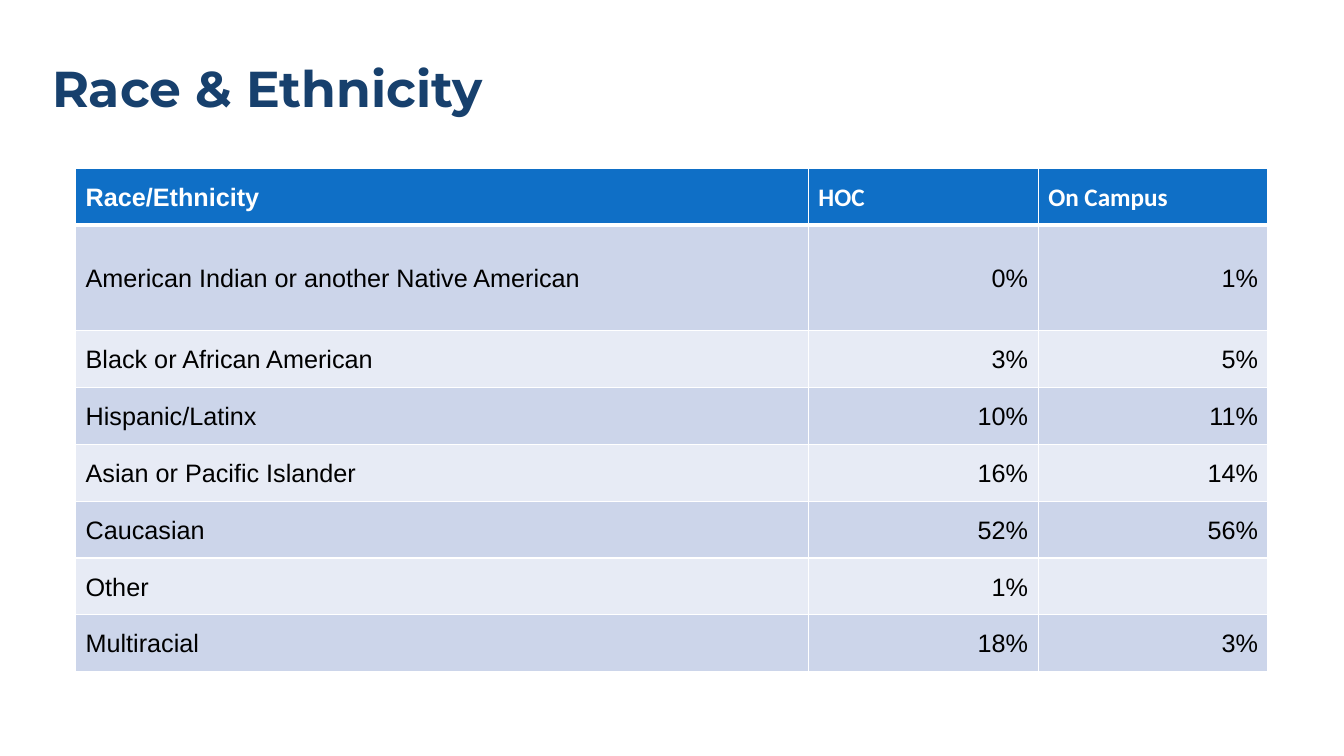
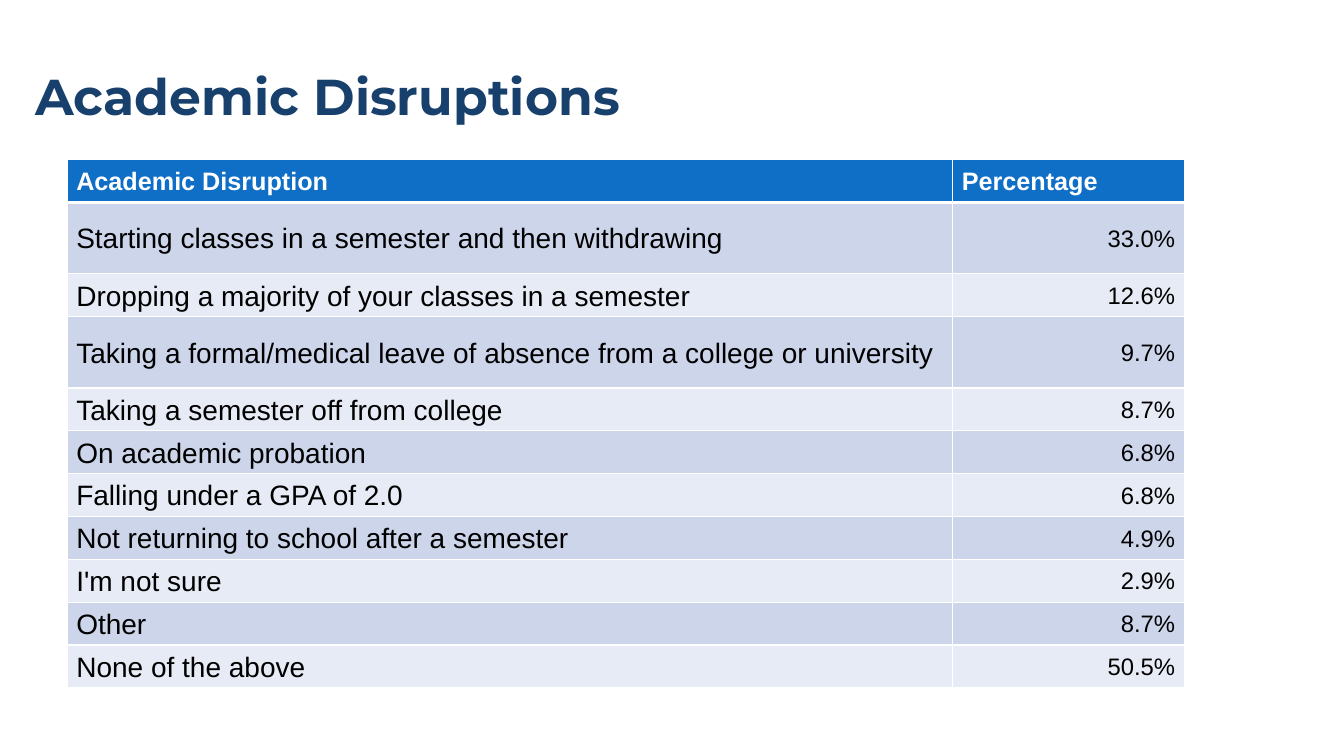
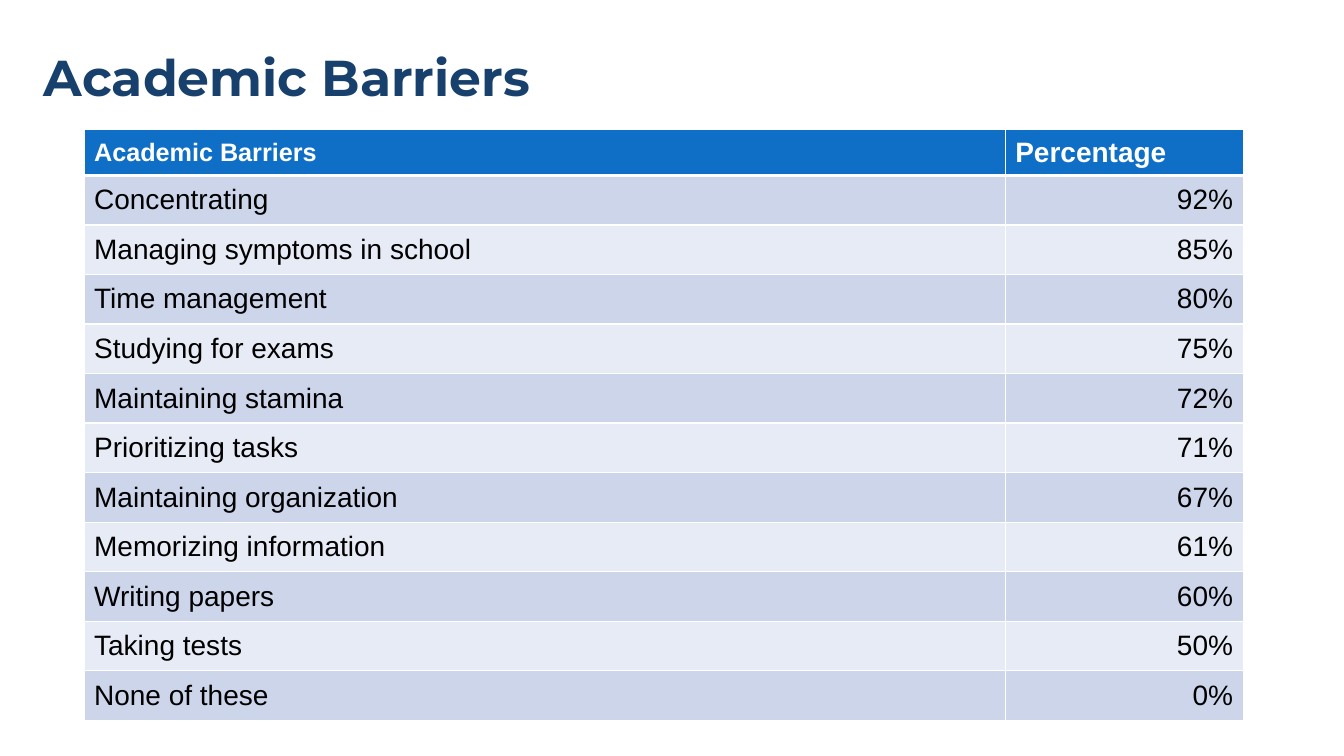
import pptx
import pptx.dml.color
import pptx.enum.text
import pptx.oxml.ns
import pptx.util
from lxml import etree

Pt = pptx.util.Pt
ANCHOR = pptx.enum.text.MSO_ANCHOR
ALIGN = pptx.enum.text.PP_ALIGN
COLORS = {
    "title": "17406D", "header": "0F6FC6", "band_dark": "CCD5EA",
    "band_light": "E7EBF5", "text": "000000", "white": "FFFFFF",
}
TITLE_FORMAT = {"name": "Montserrat", "size": Pt(36), "bold": True}


def write_text(para, text, color, formats):
    """Add one formatted run to a paragraph."""
    span = para.add_run()
    span.text = text
    span.font.color.rgb = pptx.dml.color.RGBColor.from_string(COLORS[color])
    for name, value in formats.items():
        setattr(span.font, name, value)


def add_border(cell, side, width):
    """Draw a white line on one side (L, R, T or B) of a cell."""
    properties = cell._tc.get_or_add_tcPr()
    line = etree.SubElement(properties, pptx.oxml.ns.qn(f"a:ln{side}"), w=str(Pt(width)))
    fill = etree.SubElement(line, pptx.oxml.ns.qn("a:solidFill"))
    etree.SubElement(fill, pptx.oxml.ns.qn("a:srgbClr"), val=COLORS["white"])


# Content: boxes are left, top, width, height; sizes and fonts go by column
SLIDES = [
    {
        "title": "Race & Ethnicity", "title_box": (30, 24, 640, 82),
        "corner": (54, 120), "columns": (523.4, 164.2, 164.2),
        "header_height": 40.6, "row_height": 40.6, "tall_rows": {1: 75.6},
        "header_sizes": (18, 18, 18), "header_fonts": ("Arial", "Calibri", "Calibri"),
        "body_sizes": (18, 18, 18), "margins": (7.2, 3.6), "spacing": 1.07,
        "rows": [
            ("Race/Ethnicity", "HOC", "On Campus"),
            ("American Indian or another Native American", "0%", "1%"),
            ("Black or African American", "3%", "5%"),
            ("Hispanic/Latinx", "10%", "11%"),
            ("Asian or Pacific Islander", "16%", "14%"),
            ("Caucasian", "52%", "56%"),
            ("Other", "1%", ""),
            ("Multiracial", "18%", "3%"),
        ],
    },
    {
        "title": "Academic Disruptions", "title_box": (18, 29.5, 640, 82),
        "corner": (48, 114), "columns": (632.6, 165.4),
        "header_height": 30.6, "row_height": 30.6, "tall_rows": {1: 51, 3: 51},
        "header_sizes": (18, 18), "header_fonts": ("Arial", "Arial"),
        "body_sizes": (20, 17), "margins": (6.5, 0), "spacing": 1.07,
        "rows": [
            ("Academic Disruption", "Percentage"),
            ("Starting classes in a semester and then withdrawing", "33.0%"),
            ("Dropping a majority of your classes in a semester", "12.6%"),
            ("Taking a formal/medical leave of absence from a college or university", "9.7%"),
            ("Taking a semester off from college", "8.7%"),
            ("On academic probation", "6.8%"),
            ("Falling under a GPA of 2.0", "6.8%"),
            ("Not returning to school after a semester", "4.9%"),
            ("I'm not sure", "2.9%"),
            ("Other", "8.7%"),
            ("None of the above", "50.5%"),
        ],
    },
    {
        "title": "Academic Barriers", "title_box": (24, 25, 876, 65),
        "corner": (60, 92.3), "columns": (658, 170),
        "header_height": 33, "row_height": 35.4, "tall_rows": {},
        "header_sizes": (18, 20), "header_fonts": ("Arial", "Arial"),
        "body_sizes": (20, 20), "margins": (7.2, 3.6), "spacing": 1,
        "rows": [
            ("Academic Barriers", "Percentage"),
            ("Concentrating", "92%"),
            ("Managing symptoms in school", "85%"),
            ("Time management", "80%"),
            ("Studying for exams", "75%"),
            ("Maintaining stamina", "72%"),
            ("Prioritizing tasks", "71%"),
            ("Maintaining organization", "67%"),
            ("Memorizing information", "61%"),
            ("Writing papers", "60%"),
            ("Taking tests", "50%"),
            ("None of these", "0%"),
        ],
    },
]

deck = pptx.Presentation()
deck.slide_width, deck.slide_height = Pt(960), Pt(540)

for content in SLIDES:
    page = deck.slides.add_slide(deck.slide_layouts[5])

    # Title
    title = page.shapes.title
    title.left, title.top, title.width, title.height = map(Pt, content["title_box"])
    title.text_frame.auto_size = pptx.enum.text.MSO_AUTO_SIZE.NONE
    title.text_frame.vertical_anchor = ANCHOR.MIDDLE
    para = title.text_frame.paragraphs[0]
    para.alignment = ALIGN.LEFT
    para.line_spacing = 0.9
    write_text(para, content["title"], "title", TITLE_FORMAT)

    # Table grid
    rows, columns = content["rows"], content["columns"]
    heights = [content["header_height"]] + [content["row_height"]] * (len(rows) - 1)
    for row, height in content["tall_rows"].items():
        heights[row] = height
    left, top = content["corner"]
    table = page.shapes.add_table(
        len(rows), len(columns), Pt(left), Pt(top), Pt(sum(columns)), Pt(sum(heights))
    ).table
    for column, width in enumerate(columns):
        table.columns[column].width = Pt(width)

    # Table cells
    across, down = map(Pt, content["margins"])
    for row, texts in enumerate(rows):
        table.rows[row].height = Pt(heights[row])
        is_header = row == 0
        band = "header" if is_header else "band_dark" if row % 2 else "band_light"
        for column, text in enumerate(texts):
            cell = table.cell(row, column)
            add_border(cell, "L", 1)
            add_border(cell, "R", 1)
            add_border(cell, "T", 3 if row == 1 else 1)
            add_border(cell, "B", 3 if is_header else 1)
            cell.fill.solid()
            cell.fill.fore_color.rgb = pptx.dml.color.RGBColor.from_string(COLORS[band])
            cell.vertical_anchor = ANCHOR.MIDDLE
            cell.margin_left = cell.margin_right = across
            cell.margin_top = cell.margin_bottom = down
            if not text:
                continue
            para = cell.text_frame.paragraphs[0]
            para.line_spacing = content["spacing"]
            para.alignment = ALIGN.LEFT if is_header or column == 0 else ALIGN.RIGHT
            sizes = content["header_sizes" if is_header else "body_sizes"]
            write_text(para, text, "white" if is_header else "text", {
                "name": content["header_fonts"][column] if is_header else "Arial",
                "size": Pt(sizes[column]),
                "bold": is_header,
            })

deck.save("out.pptx")
